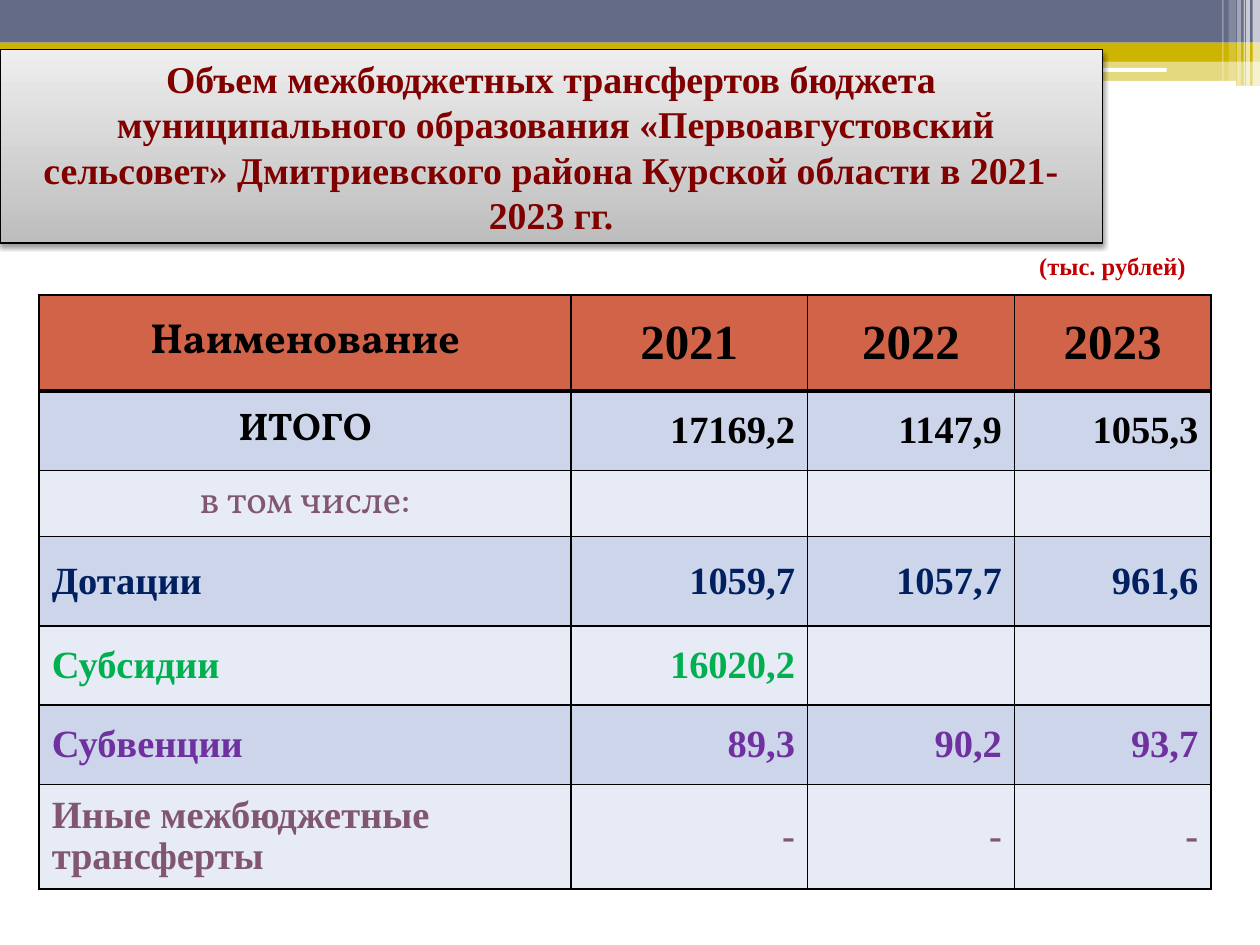
from pptx import Presentation
from pptx.dml.color import RGBColor
from pptx.enum.shapes import MSO_SHAPE
from pptx.enum.text import MSO_ANCHOR, MSO_AUTO_SIZE, PP_ALIGN
from pptx.oxml import parse_xml
from pptx.oxml.ns import nsdecls, qn
from pptx.util import Cm, Pt
from lxml.etree import SubElement

COLORS = {
    "white": "FFFFFF", "black": "000000", "slate": "646B86", "gold": "CCB400",
    "header": "D16349", "band": "CCD5EA", "light": "E7EBF5", "mauve": "805671",
    "navy": "002060", "green": "00B050", "violet": "7030A0", "maroon": "800000",
    "red": "C00000", "gray": "BDBDBD", "silver": "EEEEEE",
}
SERIF, DISPLAY = "Times New Roman", "Vollkorn"
TITLE = ("Объем межбюджетных трансфертов бюджета\v муниципального образования "
         "«Первоавгустовский сельсовет» Дмитриевского района Курской области "
         "в 2021-2023 гг.")
UNITS = "(тыс. рублей)"

BARS = [
    (0, 1.02, 25.4, 0.23, "gold", 50),
    (0, 0, 25.4, 0.86, "slate", 100),
    (0, 0.86, 25.4, 0.25, "gold", 100),
    (15.04, 0.99, 10.36, 0.25, "gold", 100),
    (15.04, 1.22, 10.36, 0.51, "gold", 50),
]
PILLS = [(15.01, 1.37, 8.51, 0.08, "white", 100), (20.47, 1.63, 4.45, 0.1, "white", 100)]
STRIPES = [
    (25.25, 0, 0.15, 1.73, "white", 65),
    (25.12, 0, 0.08, 1.73, "white", 65),
    (25.07, 0, 0.03, 1.73, "white", 60),
    (24.94, 0, 0.08, 1.73, "white", 40),
    (24.77, 0, 0.15, 1.63, "white", 20),
    (24.64, 0, 0.03, 1.63, "white", 30),
]

COLUMNS = [10.72, 4.77, 4.17, 3.96]
ROWS = [
    (1.93, "black", ["Наименование", "2021", "2022", "2023"]),
    (1.6, "black", ["ИТОГО", "17169,2", "1147,9", "1055,3"]),
    (1.2, "mauve", ["в том числе:", "", "", ""]),
    (1.8, "navy", ["Дотации", "1059,7", "1057,7", "961,6"]),
    (1.6, "green", ["Субсидии", "16020,2", "", ""]),
    (1.6, "violet", ["Субвенции", "89,3", "90,2", "93,7"]),
    (2.11, "mauve", ["Иные межбюджетные трансферты", "-", "-", "-"]),
]


def rgb(name):
    return RGBColor.from_string(COLORS[name])


def apply(target, values):
    for name, value in values.items():
        setattr(target, name, value)


def style(paragraph, color, **values):
    apply(paragraph.font, values)
    paragraph.font.color.rgb = rgb(color)


def add_bar(page, kind, bar):
    *place, color, opacity = bar
    shape = page.shapes.add_shape(kind, *map(Cm, place))
    shape.shadow.inherit = False
    shape.fill.solid()
    shape.fill.fore_color.rgb = rgb(color)
    shape.line.fill.background()
    if opacity < 100:
        tint = shape.fill._xPr.find(".//" + qn("a:srgbClr"))
        SubElement(tint, qn("a:alpha"), val=str(opacity * 1000))


def add_borders(cell, widths):
    properties = cell._tc.get_or_add_tcPr()
    for index, (side, width) in enumerate(widths.items()):
        properties.insert(index, parse_xml(
            f'<a:{side} {nsdecls("a")} w="{Pt(width)}"><a:solidFill>'
            f'<a:srgbClr val="{COLORS["black"]}"/></a:solidFill></a:{side}>'))


def fill_title(page):
    title = page.shapes.title
    apply(title, {"left": Cm(0), "top": Cm(1), "width": Cm(22.22), "height": Cm(3.9)})
    title.fill.gradient()
    title.fill.gradient_angle = 90
    for stop, color in zip(title.fill.gradient_stops, ("gray", "silver")):
        stop.color.rgb = rgb(color)
    title.line.color.rgb = rgb("black")
    title.line.width = Pt(0.75)
    title._element.spPr.append(parse_xml(
        f'<a:effectLst {nsdecls("a")}><a:outerShdw blurRad="{Pt(3.1)}" dist="{Pt(1.6)}" '
        f'dir="5400000" rotWithShape="0"><a:srgbClr val="{COLORS["black"]}">'
        '<a:alpha val="38000"/></a:srgbClr></a:outerShdw></a:effectLst>'))
    frame = title.text_frame
    frame.text = TITLE
    apply(frame, {"word_wrap": True, "auto_size": MSO_AUTO_SIZE.NONE,
                  "vertical_anchor": MSO_ANCHOR.MIDDLE})
    para = frame.paragraphs[0]
    para.alignment = PP_ALIGN.CENTER
    style(para, "maroon", name=SERIF, size=Pt(21.6), bold=True)
    page.shapes._spTree.append(title._element)


def add_units(page):
    box = page.shapes.add_textbox(Cm(20.7), Cm(4.93), Cm(3.61), Cm(0.84))
    box.text_frame.word_wrap = True
    box.text_frame.text = UNITS
    style(box.text_frame.paragraphs[0], "red", name=SERIF, size=Pt(14), bold=True)


def add_transfers(page):
    heights = [row[0] for row in ROWS]
    table = page.shapes.add_table(len(ROWS), len(COLUMNS), Cm(0.79), Cm(5.95),
                                  Cm(sum(COLUMNS)), Cm(sum(heights))).table
    for column, width in zip(table.columns, COLUMNS):
        column.width = Cm(width)
    for i, (height, color, texts) in enumerate(ROWS):
        table.rows[i].height = Cm(height)
        background = "header" if i == 0 else "band" if i % 2 else "light"
        for j, text in enumerate(texts):
            cell = table.cell(i, j)
            cell.vertical_anchor = MSO_ANCHOR.MIDDLE
            cell.fill.solid()
            cell.fill.fore_color.rgb = rgb(background)
            add_borders(cell, {"lnL": 1, "lnR": 1, "lnT": 3 if i == 1 else 1,
                               "lnB": 3 if i == 0 else 1})
            if not text:
                continue
            cell.text = text
            para = cell.text_frame.paragraphs[0]
            centered = i == 0 or (j == 0 and i < 3)
            para.alignment = (PP_ALIGN.CENTER if centered
                              else PP_ALIGN.RIGHT if j else PP_ALIGN.LEFT)
            para.line_spacing = 0.95 if i == len(ROWS) - 1 else 1
            size = (28 if j else 24) if i == 0 else 22
            style(para, color, name=DISPLAY if j == 0 and i < 3 else SERIF,
                  size=Pt(size), bold=i != 2)


def main():
    deck = Presentation()
    deck.slide_width, deck.slide_height = Cm(25.4), Cm(19.05)
    page = deck.slides.add_slide(deck.slide_layouts[5])
    page.background.fill.solid()
    page.background.fill.fore_color.rgb = rgb("white")
    for kind, bars in ((MSO_SHAPE.RECTANGLE, BARS), (MSO_SHAPE.ROUNDED_RECTANGLE, PILLS),
                       (MSO_SHAPE.RECTANGLE, STRIPES)):
        for bar in bars:
            add_bar(page, kind, bar)
    add_transfers(page)
    fill_title(page)
    add_units(page)
    deck.save("out.pptx")


if __name__ == "__main__":
    main()
